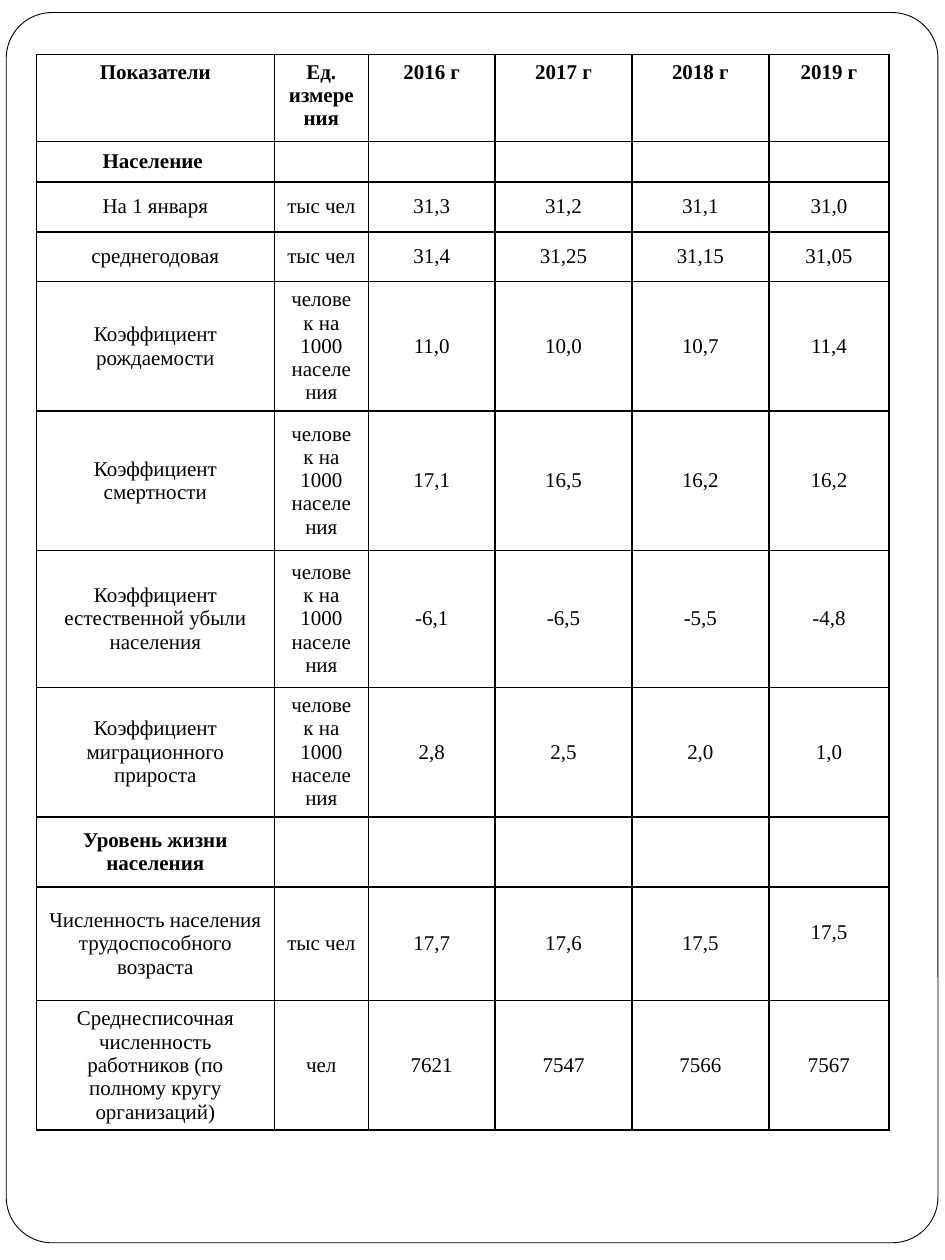
from lxml import etree
from pptx import Presentation
from pptx.dml.color import RGBColor
from pptx.enum import shapes, text
from pptx.oxml import ns
from pptx.util import Pt

BLACK = RGBColor(0x00, 0x00, 0x00)
WHITE = RGBColor(0xFF, 0xFF, 0xFF)
FONT = "Times New Roman"
SIZE = 12

PER_1000 = "человек на 1000 населения"
COL_WIDTHS = [136, 53.7, 72.5, 78.2, 78.2, 68.8]
# Row height, then the cell texts; a section row has only its heading
ROWS = [
    (50, ["Показатели", "Ед. измерения", "2016 г", "2017 г", "2018 г", "2019 г"]),
    (23, ["Население "]),
    (28.5, ["На 1 января", "тыс чел", "31,3", "31,2", "31,1", "31,0"]),
    (28.5, ["среднегодовая", "тыс чел", "31,4", "31,25", "31,15", "31,05"]),
    (73.7, ["Коэффициент рождаемости", PER_1000, "11,0", "10,0", "10,7", "11,4"]),
    (79.7, ["Коэффициент смертности", PER_1000, "17,1", "16,5", "16,2", "16,2"]),
    (78.4, ["Коэффициент естественной убыли населения", PER_1000,
            "-6,1", "-6,5", "-5,5", "-4,8"]),
    (74, ["Коэффициент миграционного прироста", PER_1000, "2,8", "2,5", "2,0", "1,0"]),
    (40, ["Уровень жизни населения"]),
    (65, ["Численность населения трудоспособного возраста", "тыс чел",
          "17,7", "17,6", "17,5", "17,5"]),
    (74, ["Среднесписочная численность работников (по полному кругу организаций)",
          "чел", "7621", "7547", "7566", "7567"]),
]


def add_frame(s, x, y, w, h):
    """Rounded page frame."""
    sp = s.shapes.add_shape(shapes.MSO_SHAPE.ROUNDED_RECTANGLE,
                            Pt(x), Pt(y), Pt(w), Pt(h))
    sp.adjustments[0] = 0.049
    sp.shadow.inherit = False
    sp.fill.solid()
    sp.fill.fore_color.rgb = WHITE
    sp.line.color.rgb = BLACK
    sp.line.width = Pt(0.5)


def set_borders(cell):
    """Thin black line on all four sides, placed before the cell fill."""
    tc_pr = cell._tc.get_or_add_tcPr()
    for i, side in enumerate(("lnL", "lnR", "lnT", "lnB")):
        ln = etree.Element(ns.qn("a:" + side), w=str(Pt(1)))
        fill = etree.SubElement(ln, ns.qn("a:solidFill"))
        etree.SubElement(fill, ns.qn("a:srgbClr"), val=str(BLACK))
        tc_pr.insert(i, ln)


def fill_cell(cell, value, bold, anchor):
    cell.fill.solid()
    cell.fill.fore_color.rgb = WHITE
    set_borders(cell)
    cell.vertical_anchor = anchor
    p = cell.text_frame.paragraphs[0]
    p.alignment = text.PP_ALIGN.CENTER
    if not value:
        # Keep an empty cell from stretching its row
        etree.SubElement(p._p, ns.qn("a:endParaRPr"), sz=str(SIZE * 100))
        return
    p.text = value
    font = p.runs[0].font
    font.name, font.size, font.bold = FONT, Pt(SIZE), bold
    font.color.rgb = BLACK


def add_indicators(s, x, y, w, h):
    """Table of population and living standard indicators."""
    table = s.shapes.add_table(len(ROWS), len(COL_WIDTHS),
                               Pt(x), Pt(y), Pt(w), Pt(h)).table
    table.first_row = table.horz_banding = False
    for col, width in zip(table.columns, COL_WIDTHS):
        col.width = Pt(width)
    for r, (height, values) in enumerate(ROWS):
        table.rows[r].height = Pt(height)
        bold = r == 0 or len(values) == 1
        anchor = text.MSO_ANCHOR.MIDDLE if r else text.MSO_ANCHOR.TOP
        for c in range(len(COL_WIDTHS)):
            value = values[c] if c < len(values) else ""
            fill_cell(table.cell(r, c), value, bold, anchor)
    # The 2019 working-age figure sits slightly above the middle
    table.cell(9, 5).margin_bottom = Pt(16.5)


def main():
    prs = Presentation()
    prs.slide_width, prs.slide_height = Pt(540), Pt(720)
    s = prs.slides.add_slide(prs.slide_layouts[6])
    add_frame(s, 3.6, 7.2, 532.4, 703)
    add_indicators(s, 20.8, 31, sum(COL_WIDTHS), sum(h for h, _ in ROWS))
    prs.save("out.pptx")


if __name__ == "__main__":
    main()
